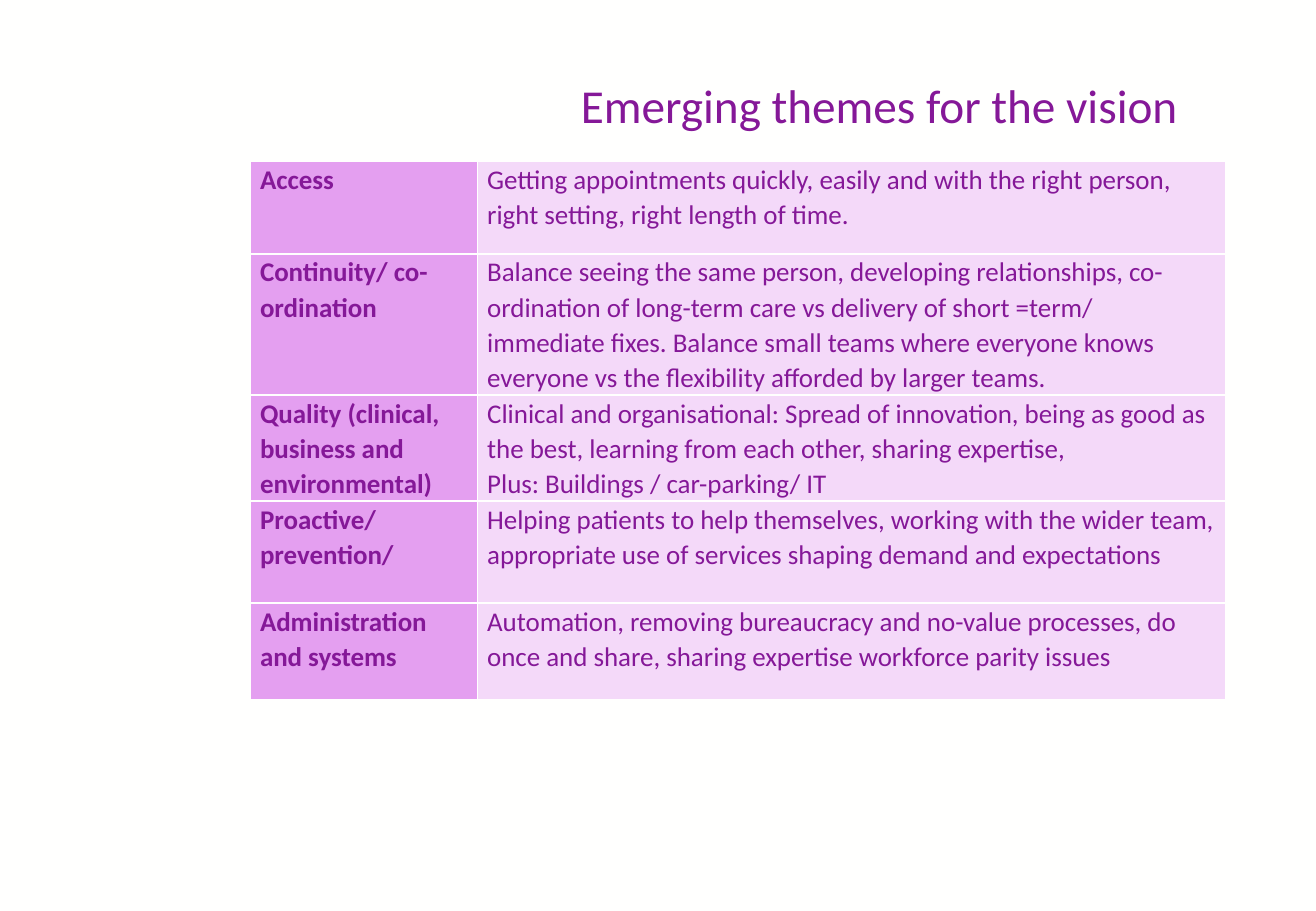
"""Build the slide of emerging themes for the vision."""
from dataclasses import dataclass

from lxml.etree import SubElement
from pptx import Presentation
from pptx.dml.color import RGBColor
from pptx.enum.text import MSO_ANCHOR, PP_ALIGN
from pptx.oxml.ns import qn
from pptx.util import Emu, Pt

PURPLE = RGBColor(0x85, 0x18, 0x98)
ORCHID = RGBColor(0xE4, 0x9F, 0xF0)
LILAC = RGBColor(0xF4, 0xD9, 0xF9)
WHITE = RGBColor(0xFF, 0xFF, 0xFE)
FONT = "Calibri"
COLUMN_WIDTHS = (187, 616)


@dataclass(frozen=True)
class Theme:
    name: str
    details: tuple[str, ...]
    height: int


THEMES = (
    Theme("Access", (
        "Getting appointments quickly, easily and with the right person, "
        "right setting, right length of time.",), 76),
    Theme("Continuity/ co-ordination", (
        "Balance seeing the same person, developing relationships, "
        "co-ordination of long-term care vs delivery of short =term/ "
        "immediate fixes. Balance small teams where everyone knows everyone "
        "vs the flexibility afforded by larger teams.",), 114),
    Theme("Quality (clinical, business and environmental)", (
        "Clinical and organisational: Spread of innovation, being as good as "
        "the best, learning from each other, sharing expertise,",
        "Plus: Buildings / car-parking/ IT"), 84),
    Theme("Proactive/ prevention/", (
        "Helping patients to help themselves, working with the wider team, "
        "appropriate use of services shaping demand and expectations",), 84),
    Theme("Administration and systems", (
        "Automation, removing bureaucracy and no-value processes, do once "
        "and share, sharing expertise workforce parity issues",), 80),
)


def px(n: int) -> Emu:
    return Emu(n * 9144)


def write(tf, *lines: str, size: int, bold: bool = False,
          align=PP_ALIGN.LEFT, spacing: float = 1.0) -> None:
    for i, line in enumerate(lines):
        p = tf.paragraphs[0] if i == 0 else tf.add_paragraph()
        p.alignment = align
        p.line_spacing = spacing
        r = p.add_run()
        r.text = line
        r.font.name = FONT
        r.font.size = Pt(size)
        r.font.bold = bold
        r.font.color.rgb = PURPLE


def add_borders(cell) -> None:
    tc_pr = cell._tc.get_or_add_tcPr()
    for side in ("lnL", "lnR", "lnT", "lnB"):
        ln = SubElement(tc_pr, qn(f"a:{side}"), w=str(Pt(1)))
        fill = SubElement(ln, qn("a:solidFill"))
        SubElement(fill, qn("a:srgbClr"), val=str(WHITE))


def fill_cell(cell, *lines: str, fill: RGBColor, bold: bool) -> None:
    cell.margin_left = cell.margin_right = px(8)
    cell.margin_top = cell.margin_bottom = 0
    add_borders(cell)
    cell.fill.solid()
    cell.fill.fore_color.rgb = fill
    write(cell.text_frame, *lines, size=16, bold=bold, spacing=1.07)


def add_title(slide, text: str) -> None:
    sp = slide.shapes.title
    sp.left, sp.top, sp.width, sp.height = map(px, (413, 49, 621, 75))
    sp.text_frame.vertical_anchor = MSO_ANCHOR.MIDDLE
    write(sp.text_frame, text, size=28, align=PP_ALIGN.CENTER)


def add_themes(slide, themes: tuple[Theme, ...]) -> None:
    height = sum(theme.height for theme in themes)
    table = slide.shapes.add_table(
        len(themes), len(COLUMN_WIDTHS), px(206), px(133),
        px(sum(COLUMN_WIDTHS)), px(height)).table
    table.first_row = table.horz_banding = False
    for column, width in zip(table.columns, COLUMN_WIDTHS):
        column.width = px(width)
    for row, theme in zip(table.rows, themes):
        row.height = px(theme.height)
        name, details = row.cells
        fill_cell(name, theme.name, fill=ORCHID, bold=True)
        fill_cell(details, *theme.details, fill=LILAC, bold=False)


def main() -> None:
    prs = Presentation()
    prs.slide_width, prs.slide_height = px(1083), px(750)
    slide = prs.slides.add_slide(prs.slide_layouts[5])
    slide.background.fill.solid()
    slide.background.fill.fore_color.rgb = WHITE
    add_title(slide, "Emerging themes for the vision")
    add_themes(slide, THEMES)
    prs.save("out.pptx")


if __name__ == "__main__":
    main()
